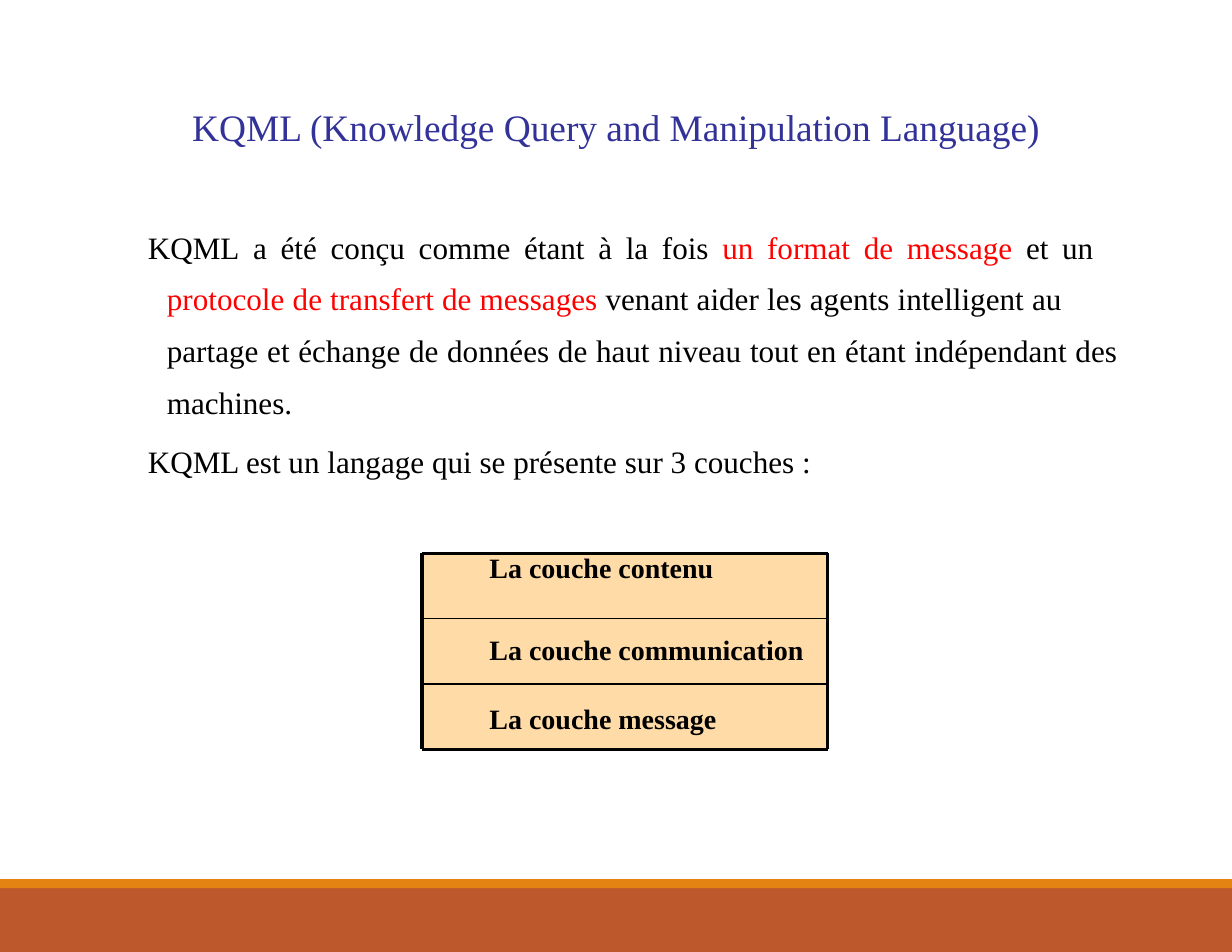
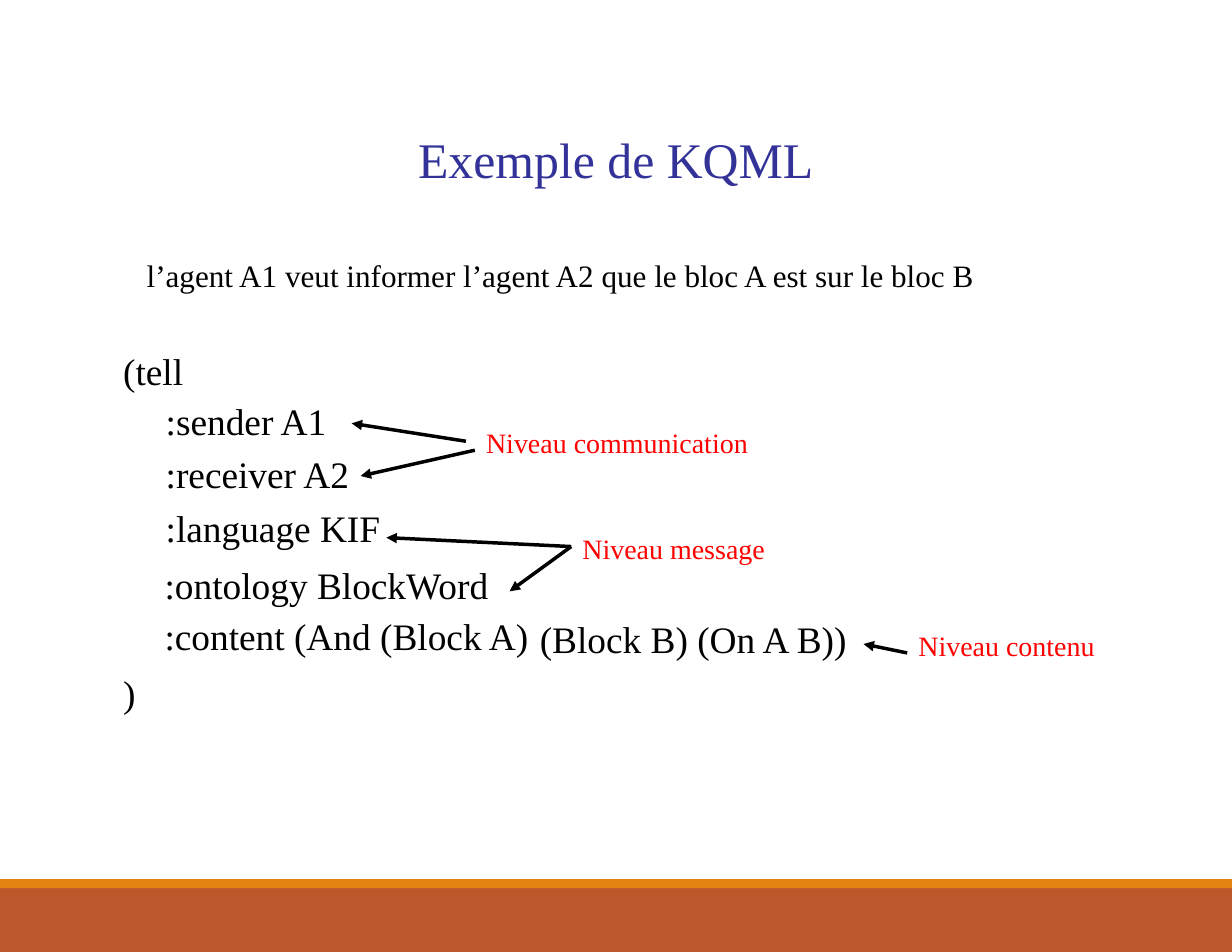
from dataclasses import dataclass

from lxml import etree
from pptx import Presentation
from pptx.dml.color import RGBColor
from pptx.enum.shapes import MSO_CONNECTOR, MSO_SHAPE
from pptx.enum.text import MSO_ANCHOR, PP_ALIGN
from pptx.oxml.ns import qn
from pptx.shapes.autoshape import Shape
from pptx.slide import Slide
from pptx.text.text import TextFrame
from pptx.util import Inches, Pt

RECT = MSO_SHAPE.RECTANGLE
STRAIGHT = MSO_CONNECTOR.STRAIGHT
LEFT, CENTER = PP_ALIGN.LEFT, PP_ALIGN.CENTER
TOP = MSO_ANCHOR.TOP
WIDTH, HEIGHT = 11, 8.5


@dataclass(frozen=True)
class Theme:
    font: str = "Times New Roman"
    title: str = "323299"
    ink: str = "000000"
    accent: str = "FF0000"
    layer: str = "FFDBA7"
    band: str = "BD582C"
    strip: str = "E48312"
    code: float = 24
    body: float = 20
    label: float = 18
    thin: float = 1
    thick: float = 2.25


THEME = Theme()


@dataclass(frozen=True)
class Box:
    x: float
    y: float
    w: float
    h: float


@dataclass(frozen=True)
class Span:
    text: str
    color: str = THEME.ink
    gap: int = 0  # extra width of each space, in hundredths of a point


@dataclass(frozen=True)
class Line:
    spans: tuple[Span, ...]
    indent: float = 0
    before: float = 0


@dataclass(frozen=True)
class Label:
    text: str
    x: float
    y: float
    w: float


@dataclass(frozen=True)
class Rule:
    x1: float
    y1: float
    x2: float
    y2: float


@dataclass(frozen=True)
class Layer:
    text: str
    drop: float


def plain(text: str, color: str = THEME.ink, indent: float = 0,
          before: float = 0, gap: int = 0) -> Line:
    return Line((Span(text, color, gap),), indent, before)


def pieces(span: Span) -> list[tuple[str, int]]:
    """Split a span so that its spaces can be widened on their own."""
    if not span.gap:
        return [(span.text, 0)]
    parts: list[tuple[str, int]] = []
    for i, word in enumerate(span.text.split(" ")):
        if i:
            parts.append((" ", span.gap))
        if word:
            parts.append((word, 0))
    return parts


def write(frame: TextFrame, lines: list[Line], *, size: float,
          pitch: float, bold: bool = False, align: PP_ALIGN = LEFT) -> None:
    frame.word_wrap = True
    frame.vertical_anchor = TOP
    frame.margin_left = frame.margin_right = 0
    frame.margin_top = frame.margin_bottom = 0
    for i, line in enumerate(lines):
        para = frame.add_paragraph() if i else frame.paragraphs[0]
        para.alignment = align
        para.line_spacing = Pt(pitch)
        para.space_before = Pt(line.before)
        if line.indent:
            props = para._p.get_or_add_pPr()
            props.set("marL", str(Inches(line.indent)))
            props.set("indent", "0")
        for span in line.spans:
            for text, gap in pieces(span):
                run = para.add_run()
                run.text = text
                run.font.name = THEME.font
                run.font.size = Pt(size)
                run.font.bold = bold
                run.font.color.rgb = RGBColor.from_string(span.color)
                props = run._r.get_or_add_rPr()
                props.set("kern", "0")
                if gap:
                    props.set("spc", str(gap))


def add_text(slide: Slide, box: Box, lines: list[Line], *, size: float,
             pitch: float, align: PP_ALIGN = LEFT) -> None:
    shape = slide.shapes.add_textbox(Inches(box.x), Inches(box.y),
                                     Inches(box.w), Inches(box.h))
    write(shape.text_frame, lines, size=size, pitch=pitch, align=align)


def add_rect(slide: Slide, box: Box, fill: str) -> Shape:
    shape = slide.shapes.add_shape(RECT, Inches(box.x), Inches(box.y),
                                   Inches(box.w), Inches(box.h))
    shape.shadow.inherit = False
    shape.fill.solid()
    shape.fill.fore_color.rgb = RGBColor.from_string(fill)
    shape.line.fill.background()
    return shape


def add_rule(slide: Slide, rule: Rule, weight: float = THEME.thick,
             arrow: bool = False) -> None:
    link = slide.shapes.add_connector(
        STRAIGHT, Inches(rule.x1), Inches(rule.y1),
        Inches(rule.x2), Inches(rule.y2))
    link.line.color.rgb = RGBColor.from_string(THEME.ink)
    link.line.width = Pt(weight)
    if arrow:
        etree.SubElement(link.line._get_or_add_ln(), qn("a:tailEnd"),
                         type="triangle")
    etree.SubElement(link._element.spPr, qn("a:effectLst"))


def add_slide(deck: Presentation, title: str, top: float, size: float,
              pitch: float) -> Slide:
    """Add a blank slide with the footer bands and a centred title."""
    slide = deck.slides.add_slide(deck.slide_layouts[6])
    add_rect(slide, Box(0, 7.93, WIDTH, 0.57), THEME.band)
    add_rect(slide, Box(0, 7.85, WIDTH, 0.08), THEME.strip)
    add_text(slide, Box(0, top, WIDTH, 0.5), [plain(title, THEME.title)],
             size=size, pitch=pitch, align=CENTER)
    return slide


def add_layers(slide: Slide, layers: list[Layer], box: Box) -> None:
    """Stack the layers, then rule their edges."""
    count = len(layers)
    step = box.h / count
    right, bottom = box.x + box.w, box.y + box.h
    for i, layer in enumerate(layers):
        shape = add_rect(slide, Box(box.x, box.y + i * step, box.w, step),
                         THEME.layer)
        frame = shape.text_frame
        write(frame, [plain(layer.text, indent=0.6)], size=THEME.label,
              pitch=20, bold=True)
        frame.margin_top = Inches(layer.drop)
    for i in range(count + 1):
        y = box.y + i * step
        add_rule(slide, Rule(box.x, y, right, y),
                 THEME.thin if 0 < i < count else THEME.thick)
    for x in (box.x, right):
        add_rule(slide, Rule(x, box.y, x, bottom))


def build_intro(deck: Presentation) -> None:
    slide = add_slide(deck, "KQML (Knowledge Query and Manipulation Language)",
                      0.98, 24, 25.4)
    wide = 375
    body = [
        Line((Span("KQML a été conçu comme étant à la fois ", gap=wide),
              Span("un format de message ", THEME.accent, wide),
              Span("et un", gap=wide))),
        Line((Span("protocole de transfert de messages ", THEME.accent, 20),
              Span("venant aider les agents intelligent au", gap=20)),
             0.17, 9.8),
        plain("partage et échange de données de haut niveau tout en étant "
              "indépendant des", indent=0.17, before=10.5, gap=55),
        plain("machines.", indent=0.17, before=10.5),
        plain("KQML est un langage qui se présente sur 3 couches :", before=15),
    ]
    add_text(slide, Box(1.32, 2.05, 9, 2.24), body, size=THEME.body, pitch=23)
    add_layers(slide, [Layer("La couche contenu", 0),
                       Layer("La couche communication", 0.15),
                       Layer("La couche message", 0.18)],
               Box(3.77, 4.94, 3.62, 1.75))


def build_sample(deck: Presentation) -> None:
    slide = add_slide(deck, "Exemple de KQML", 1.22, 32, 33.6)
    for rule in (Rule(4.16, 3.94, 3.14, 3.78), Rule(4.24, 4.02, 3.22, 4.25),
                 Rule(5.1, 4.88, 3.45, 4.8), Rule(5.1, 4.88, 4.55, 5.28),
                 Rule(8.1, 5.83, 7.71, 5.75)):
        add_rule(slide, rule, arrow=True)
    add_text(slide, Box(1.31, 2.32, 8, 0.31),
             [plain("l’agent A1 veut informer l’agent A2 que le bloc A est "
                    "sur le bloc B")], size=THEME.body, pitch=21.6)
    code = [
        (Box(1.1, 3.16, 2.6, 1.8),
         [plain("(tell"), plain(":sender A1", indent=0.38, before=6.7),
          plain(":receiver A2", indent=0.38, before=8.7),
          plain(":language KIF", indent=0.38, before=9)]),
        (Box(1.47, 5.07, 3.4, 0.84),
         [plain(":ontology BlockWord"),
          plain(":content (And (Block A)", before=7)]),
        (Box(4.82, 5.55, 3, 0.36), [plain("(Block B) (On A B))")]),
        (Box(1.1, 6.03, 0.3, 0.36), [plain(")")]),
    ]
    for box, lines in code:
        add_text(slide, box, lines, size=THEME.code, pitch=25.4)
    for label in (Label("Niveau communication", 4.34, 3.83, 2.5),
                  Label("Niveau message", 5.2, 4.78, 1.8),
                  Label("Niveau contenu", 8.2, 5.64, 1.8)):
        add_text(slide, Box(label.x, label.y, label.w, 0.28),
                 [plain(label.text, THEME.accent)],
                 size=THEME.label, pitch=19.4)


def main() -> None:
    deck = Presentation()
    deck.slide_width = Inches(WIDTH)
    deck.slide_height = Inches(HEIGHT)
    build_intro(deck)
    build_sample(deck)
    deck.save("out.pptx")


if __name__ == "__main__":
    main()
